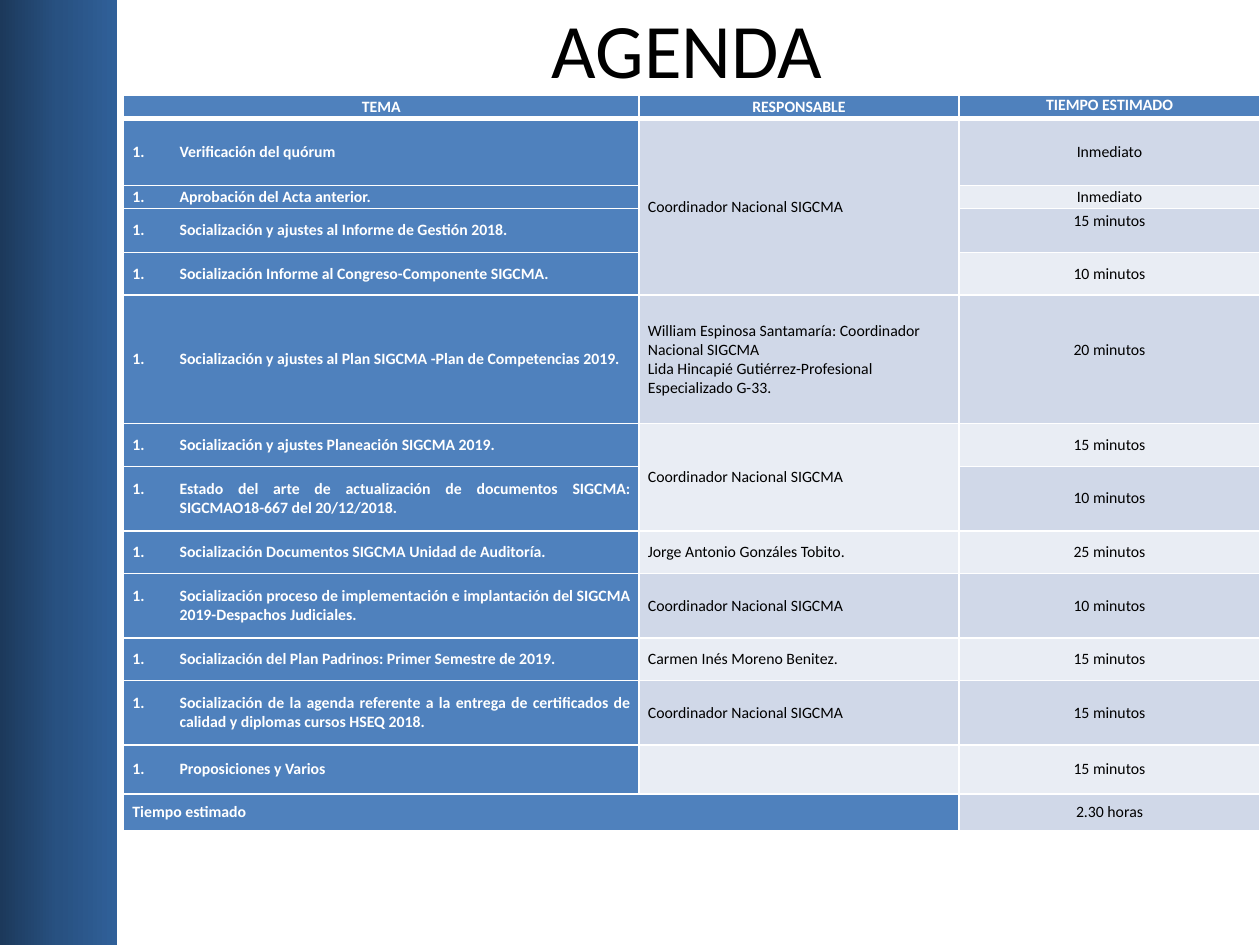
import copy
import dataclasses
import typing

import lxml.etree
import pptx
import pptx.dml.color
import pptx.enum.shapes
import pptx.enum.text
import pptx.oxml.ns
import pptx.util

Cm = pptx.util.Cm
Align = pptx.enum.text.PP_ALIGN
Anchor = pptx.enum.text.MSO_ANCHOR
qn = pptx.oxml.ns.qn


@dataclasses.dataclass(frozen=True)
class Theme:
    font: str = "Calibri"
    title_size: int = 44
    table_size: int = 9
    white: str = "FFFFFF"
    black: str = "000000"
    accent: str = "4F81BD"
    bands: tuple[str, str] = ("D0D8E8", "E9EDF4")
    sidebar: tuple[str, str, str] = ("1C395B", "285181", "306099")


@dataclasses.dataclass(frozen=True)
class Topic:
    height: float
    name: str
    time: str
    owner: tuple[str, ...] = ()
    owner_rows: int = 1
    time_lift: float = 0


THEME = Theme()
COORDINATOR = ("Coordinador Nacional SIGCMA",)
PLAN_OWNERS = (
    "William Espinosa Santamaría: Coordinador Nacional SIGCMA",
    "Lida Hincapié Gutiérrez-Profesional Especializado G-33.",
)
HEADINGS = ("TEMA", "RESPONSABLE", "TIEMPO ESTIMADO")
COLUMNS = (10.39, 6.45, 6.07)
HEADER_HEIGHT, TOTAL_HEIGHT = 0.46, 0.74
TOPICS = (
    Topic(1.35, "Verificación del quórum", "Inmediato", COORDINATOR, owner_rows=4),
    Topic(0.46, "Aprobación del Acta anterior.", "Inmediato"),
    Topic(0.89, "Socialización y ajustes al Informe de Gestión 2018.", "15 minutos", time_lift=0.39),
    Topic(0.86, "Socialización Informe al Congreso-Componente SIGCMA.", "10 minutos"),
    Topic(2.59, "Socialización y ajustes al Plan SIGCMA -Plan de Competencias 2019.", "20 minutos",
          PLAN_OWNERS, time_lift=0.39),
    Topic(0.86, "Socialización y ajustes Planeación SIGCMA 2019.", "15 minutos", COORDINATOR, owner_rows=2),
    Topic(1.3, "Estado del arte de actualización de documentos SIGCMA: SIGCMAO18-667 del 20/12/2018.",
          "10 minutos"),
    Topic(0.86, "Socialización Documentos SIGCMA Unidad de Auditoría.", "25 minutos",
          ("Jorge Antonio Gonzáles Tobito.",)),
    Topic(1.3, "Socialización proceso de implementación e implantación del SIGCMA 2019-Despachos Judiciales.",
          "10 minutos", COORDINATOR),
    Topic(0.86, "Socialización del Plan Padrinos: Primer Semestre de 2019.", "15 minutos",
          ("Carmen Inés Moreno Benitez.",)),
    Topic(1.3, "Socialización de la agenda referente a la entrega de certificados de calidad "
               "y diplomas cursos HSEQ 2018.", "15 minutos", COORDINATOR),
    Topic(0.99, "Proposiciones y Varios", "15 minutos"),
)


def rgb(value: str) -> pptx.dml.color.RGBColor:
    """Turn a hex string into a colour."""
    return pptx.dml.color.RGBColor.from_string(value)


def write(para: typing.Any, text: str, *, size: int = THEME.table_size, color: str = THEME.black,
          bold: bool = False, align: typing.Any = Align.CENTER) -> None:
    """Add one formatted span to a paragraph."""
    para.alignment = align
    span = para.add_run()
    span.text = text
    span.font.name = THEME.font
    span.font.size = pptx.util.Pt(size)
    span.font.bold = bold
    span.font.color.rgb = rgb(color)


def number(para: typing.Any) -> None:
    """Give a paragraph a hanging automatic number."""
    props = para._p.get_or_add_pPr()
    props.set("marL", str(Cm(0.95)))
    props.set("indent", str(Cm(-0.95)))
    lxml.etree.SubElement(props, qn("a:buFont"), typeface="+mj-lt")
    lxml.etree.SubElement(props, qn("a:buAutoNum"), type="arabicPeriod")
    tabs = lxml.etree.SubElement(props, qn("a:tabLst"))
    lxml.etree.SubElement(tabs, qn("a:tab"), pos=str(Cm(0.64)), algn="l")


def style_cell(cell: typing.Any, fill: str, bottom_width: float = 1) -> None:
    """Set the margins, borders and fill of a cell."""
    cell.vertical_anchor = Anchor.MIDDLE
    cell.margin_left = cell.margin_right = Cm(0.18)
    cell.margin_top = cell.margin_bottom = 0
    props = cell._tc.get_or_add_tcPr()
    for side, width in (("L", 1), ("R", 1), ("T", 1), ("B", bottom_width)):
        line = lxml.etree.SubElement(props, qn(f"a:ln{side}"), w=str(pptx.util.Pt(width)))
        solid = lxml.etree.SubElement(line, qn("a:solidFill"))
        lxml.etree.SubElement(solid, qn("a:srgbClr"), val=THEME.white)
    cell.fill.solid()
    cell.fill.fore_color.rgb = rgb(fill)


def draw_sidebar(page: typing.Any) -> None:
    """Draw the gradient band on the left edge."""
    band = page.shapes.add_shape(pptx.enum.shapes.MSO_SHAPE.RECTANGLE, 0, 0, Cm(2.36), Cm(19.05))
    band.shadow.inherit = False
    band.line.fill.background()
    band.fill.gradient()
    band.fill.gradient_angle = 0
    first = next(band.element.iter(qn("a:gs")))
    first.addnext(copy.deepcopy(first))
    for stop, color, position in zip(band.fill.gradient_stops, THEME.sidebar, (0, 0.5, 1)):
        stop.color.rgb = rgb(color)
        stop.position = position


def draw_title(page: typing.Any) -> None:
    """Place and write the title."""
    box = page.shapes.title
    box.left, box.top, box.width, box.height = Cm(2.31), 0, Cm(23.09), Cm(1.93)
    frame = box.text_frame
    frame.margin_top = frame.margin_bottom = 0
    frame.vertical_anchor = Anchor.MIDDLE
    write(frame.paragraphs[0], "AGENDA", size=THEME.title_size)


def draw_agenda(page: typing.Any) -> None:
    """Draw the agenda table."""
    heights = (HEADER_HEIGHT, *(topic.height for topic in TOPICS), TOTAL_HEIGHT)
    table = page.shapes.add_table(len(heights), len(COLUMNS), Cm(2.49), Cm(1.93),
                                  Cm(sum(COLUMNS)), Cm(sum(heights))).table
    for column, width in zip(table.columns, COLUMNS):
        column.width = Cm(width)
    for index, height in enumerate(heights):
        table.rows[index].height = Cm(height)
        band = THEME.bands[(index - 1) % 2]
        fills = (THEME.accent,) * 3 if index == 0 else (THEME.accent, band, band)
        for column, fill in enumerate(fills):
            style_cell(table.cell(index, column), fill, 3 if index == 0 else 1)

    for column, heading in enumerate(HEADINGS):
        write(table.cell(0, column).text_frame.paragraphs[0], heading, color=THEME.white, bold=True)
    table.cell(0, 2).vertical_anchor = Anchor.TOP

    for index, topic in enumerate(TOPICS, 1):
        name, owner, time = (table.cell(index, column) for column in range(3))
        para = name.text_frame.paragraphs[0]
        number(para)
        write(para, topic.name, color=THEME.white, bold=True, align=Align.JUSTIFY)
        time.margin_bottom = Cm(topic.time_lift)
        write(time.text_frame.paragraphs[0], topic.time)
        if topic.owner_rows > 1:
            owner.merge(table.cell(index + topic.owner_rows - 1, 1))
        frame = owner.text_frame
        align = Align.LEFT if len(topic.owner) > 1 else Align.JUSTIFY
        for line, person in enumerate(topic.owner):
            write(frame.add_paragraph() if line else frame.paragraphs[0], person, align=align)

    last = len(heights) - 1
    total = table.cell(last, 0)
    total.merge(table.cell(last, 1))
    write(total.text_frame.paragraphs[0], "Tiempo estimado", color=THEME.white, bold=True, align=Align.LEFT)
    write(table.cell(last, 2).text_frame.paragraphs[0], "2.30 horas")


def main() -> None:
    """Build the agenda deck."""
    deck = pptx.Presentation()
    deck.slide_width, deck.slide_height = Cm(25.4), Cm(19.05)
    page = deck.slides.add_slide(deck.slide_layouts.get_by_name("Title Only"))
    draw_sidebar(page)
    draw_title(page)
    draw_agenda(page)
    deck.save("out.pptx")


if __name__ == "__main__":
    main()
